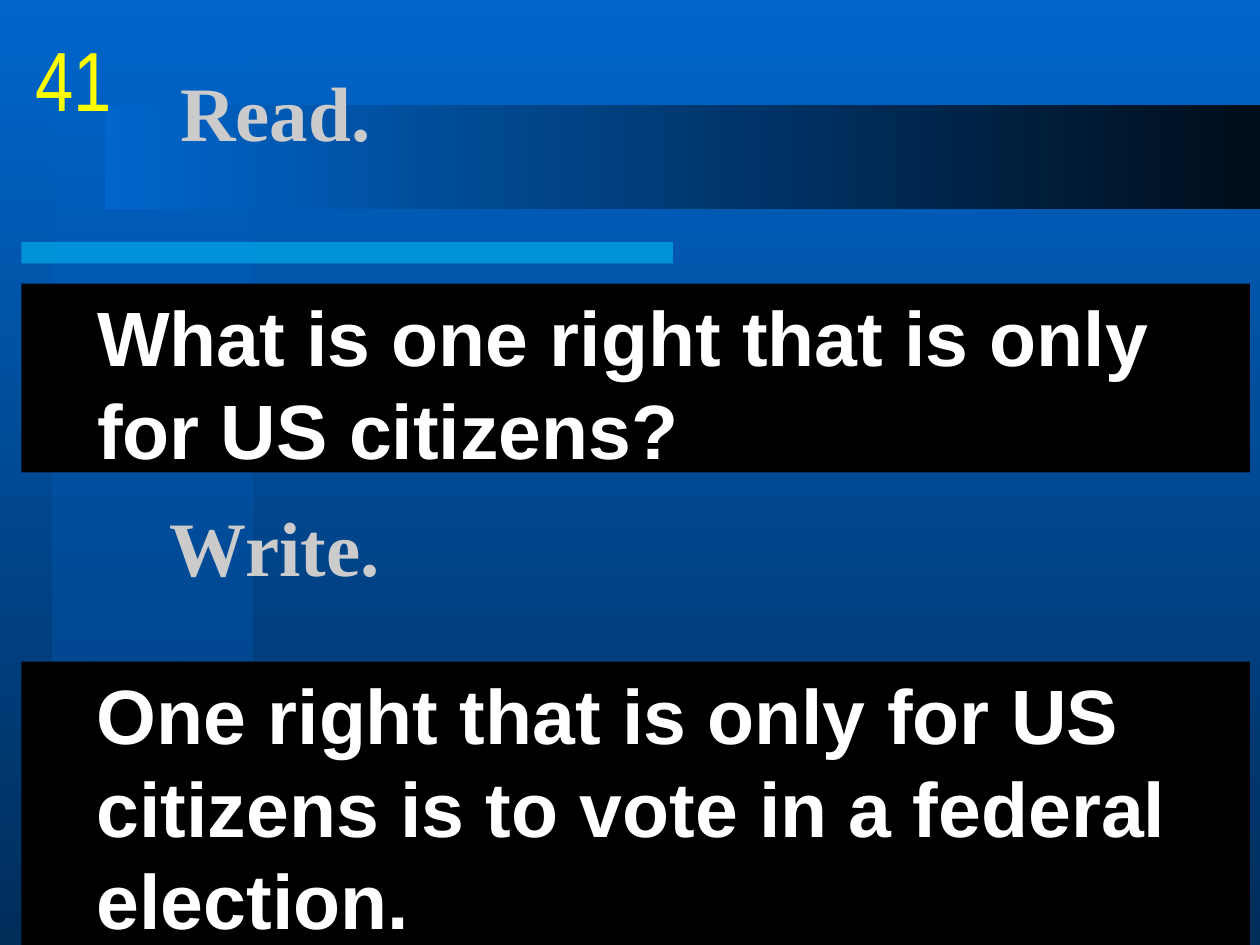
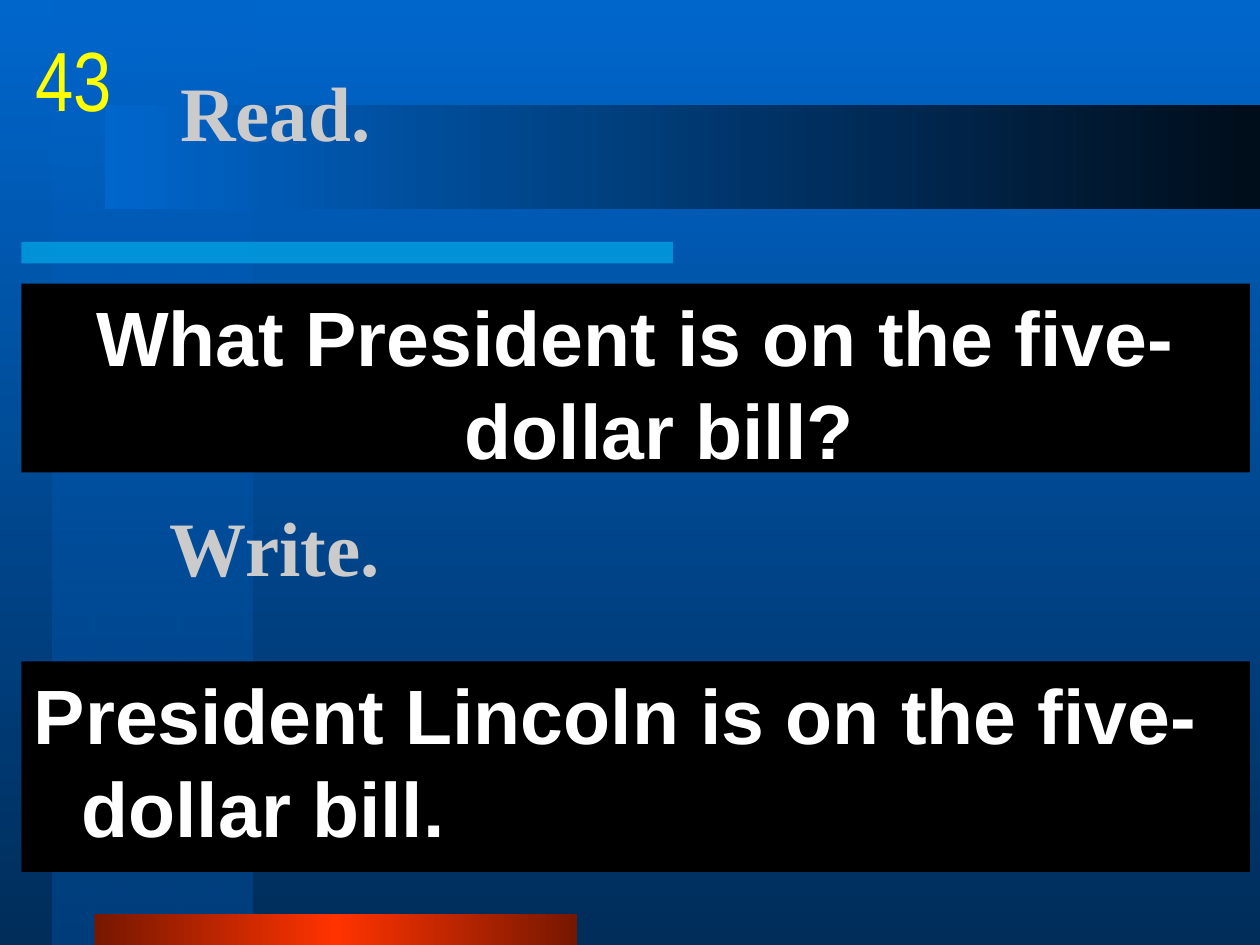
from dataclasses import dataclass

from lxml import etree
from pptx import Presentation
from pptx.dml.color import RGBColor
from pptx.enum.shapes import MSO_SHAPE
from pptx.enum.text import MSO_ANCHOR, MSO_AUTO_SIZE, PP_ALIGN
from pptx.oxml import parse_xml
from pptx.oxml.ns import nsdecls, qn
from pptx.util import Inches, Pt


@dataclass(frozen=True)
class Theme:
    blue: str = "0066CC"
    navy: str = "002D5A"
    strip_end: str = "003E7C"
    band_end: str = "000D1A"
    cyan: str = "00CCFF"
    red: str = "FF3300"
    dark_red: str = "761700"
    black: str = "000000"
    white: str = "FFFFFF"
    grey: str = "CBCBCB"
    yellow: str = "FFFF00"
    heading_font: str = "Times New Roman"
    body_font: str = "Arial"
    number_font: str = "Arial Narrow"
    text_size: int = 44
    number_size: int = 48


T = Theme()

READ_BOX = (1.33, 0.25, 8.5, 1.25)
QUESTION_BOX = (0.17, 2.25, 9.75, 1.5)
WRITE_BOX = (1.25, 3.5, 8.5, 1.67)
NUMBER_BOX = (0.17, 0.17, 0.83, 0.83)
PANEL_LEFT, ANSWER_TOP, PANEL_WIDTH = 0.17, 5.25, 9.75

# Paragraph indents: (left margin, first line)
BLOCK, HANGING = (0.5, 0), (0.38, -0.38)

CARDS = [
    dict(number="41", question="What is one right that is only for US citizens?",
         answer="One right that is only for US citizens is to vote in a federal election.",
         indent=BLOCK, question_align=PP_ALIGN.LEFT, answer_height=2.25),
    dict(number="43", question="What President is on the five-dollar bill?",
         answer="President Lincoln is on the five-dollar bill.",
         indent=HANGING, question_align=PP_ALIGN.CENTER, answer_height=1.67),
]


def inches(box):
    return [Inches(v) for v in box]


def place(shape, box):
    shape.left, shape.top, shape.width, shape.height = inches(box)


def set_fill(fill, element, stops, angle=0):
    """Fill with one colour or a gradient; stops are (position, colour, opacity)."""
    fill.solid()
    fill.fore_color.rgb = RGBColor.from_string(stops[0][1])
    solid = element.find(".//" + qn("a:solidFill"))
    if len(stops) == 1:
        alpha = etree.SubElement(solid[0], qn("a:alpha"))
        alpha.set("val", str(stops[0][2] * 1000))
        return
    marks = "".join(
        f'<a:gs pos="{pos * 1000}"><a:srgbClr val="{color}">'
        f'<a:alpha val="{opacity * 1000}"/></a:srgbClr></a:gs>'
        for pos, color, opacity in stops)
    gradient = parse_xml(
        f'<a:gradFill {nsdecls("a")} rotWithShape="1"><a:gsLst>{marks}</a:gsLst>'
        f'<a:lin ang="{angle * 60000}" scaled="0"/></a:gradFill>')
    solid.getparent().replace(solid, gradient)


def write(shape, text, *, font, size, color, bold=False, align=PP_ALIGN.LEFT,
          anchor=MSO_ANCHOR.TOP, wrap=True, indent=None):
    tf = shape.text_frame
    tf.auto_size = MSO_AUTO_SIZE.NONE
    tf.word_wrap = wrap
    tf.vertical_anchor = anchor
    tf.margin_left = tf.margin_right = Inches(0.1)
    tf.margin_top = tf.margin_bottom = Inches(0.05)
    p = tf.paragraphs[0]
    p.alignment = align
    if indent:
        pPr = p._p.get_or_add_pPr()
        pPr.set("marL", str(Inches(indent[0])))
        pPr.set("indent", str(Inches(indent[1])))
        etree.SubElement(pPr, qn("a:buNone"))
    r = p.add_run()
    r.text = text
    r.font.name, r.font.size, r.font.bold = font, Pt(size), bold
    r.font.color.rgb = RGBColor.from_string(color)


def decorate_master(master, s):
    """Give the master its background and bars, drawn on s and then moved."""
    set_fill(master.background.fill, master._element,
             [(0, T.blue, 100), (100, T.navy, 100)], 90)
    bars = [
        ((0.42, 0, 1.58, 7.5), [(0, T.blue, 50), (100, T.strip_end, 100)], 90),
        ((0.17, 1.92, 5.17, 0.17), [(0, T.cyan, 50)], 0),
        ((0.75, 7.25, 3.83, 0.25),
         [(0, T.dark_red, 100), (50, T.red, 100), (100, T.dark_red, 100)], 0),
        ((0.83, 0.83, 9.17, 0.83), [(0, T.blue, 100), (100, T.band_end, 100)], 0),
    ]
    tree = master.shapes._spTree
    for i, (box, stops, angle) in enumerate(bars):
        bar = s.shapes.add_shape(MSO_SHAPE.RECTANGLE, *inches(box))
        bar.shadow.inherit = False
        bar.line.fill.background()
        set_fill(bar.fill, bar._element, stops, angle)
        tree.insert(2 + i, bar._element)


def add_heading(shape, text):
    write(shape, text, font=T.heading_font, size=T.text_size, color=T.grey,
          bold=True, anchor=MSO_ANCHOR.MIDDLE)


def add_panel(shape, text, indent, align=PP_ALIGN.LEFT):
    shape.fill.solid()
    shape.fill.fore_color.rgb = RGBColor.from_string(T.black)
    write(shape, text, font=T.body_font, size=T.text_size, color=T.white,
          bold=True, align=align, indent=indent)


def add_card(s, number, question, answer, indent, question_align, answer_height):
    title, body = s.shapes.title, s.placeholders[1]
    place(title, READ_BOX)
    add_heading(title, "Read.")
    place(body, QUESTION_BOX)
    add_panel(body, question, indent, question_align)
    add_heading(s.shapes.add_textbox(*inches(WRITE_BOX)), "Write.")
    answer_box = (PANEL_LEFT, ANSWER_TOP, PANEL_WIDTH, answer_height)
    add_panel(s.shapes.add_textbox(*inches(answer_box)), answer, indent)
    write(s.shapes.add_textbox(*inches(NUMBER_BOX)), number,
          font=T.number_font, size=T.number_size, color=T.yellow,
          align=PP_ALIGN.CENTER, wrap=False)


def main():
    prs = Presentation()
    prs.slide_width, prs.slide_height = Inches(10), Inches(7.5)
    slides = [prs.slides.add_slide(prs.slide_layouts[1]) for _ in CARDS]
    decorate_master(prs.slide_master, slides[0])
    for s, card in zip(slides, CARDS):
        add_card(s, **card)
    prs.save("out.pptx")


if __name__ == "__main__":
    main()
